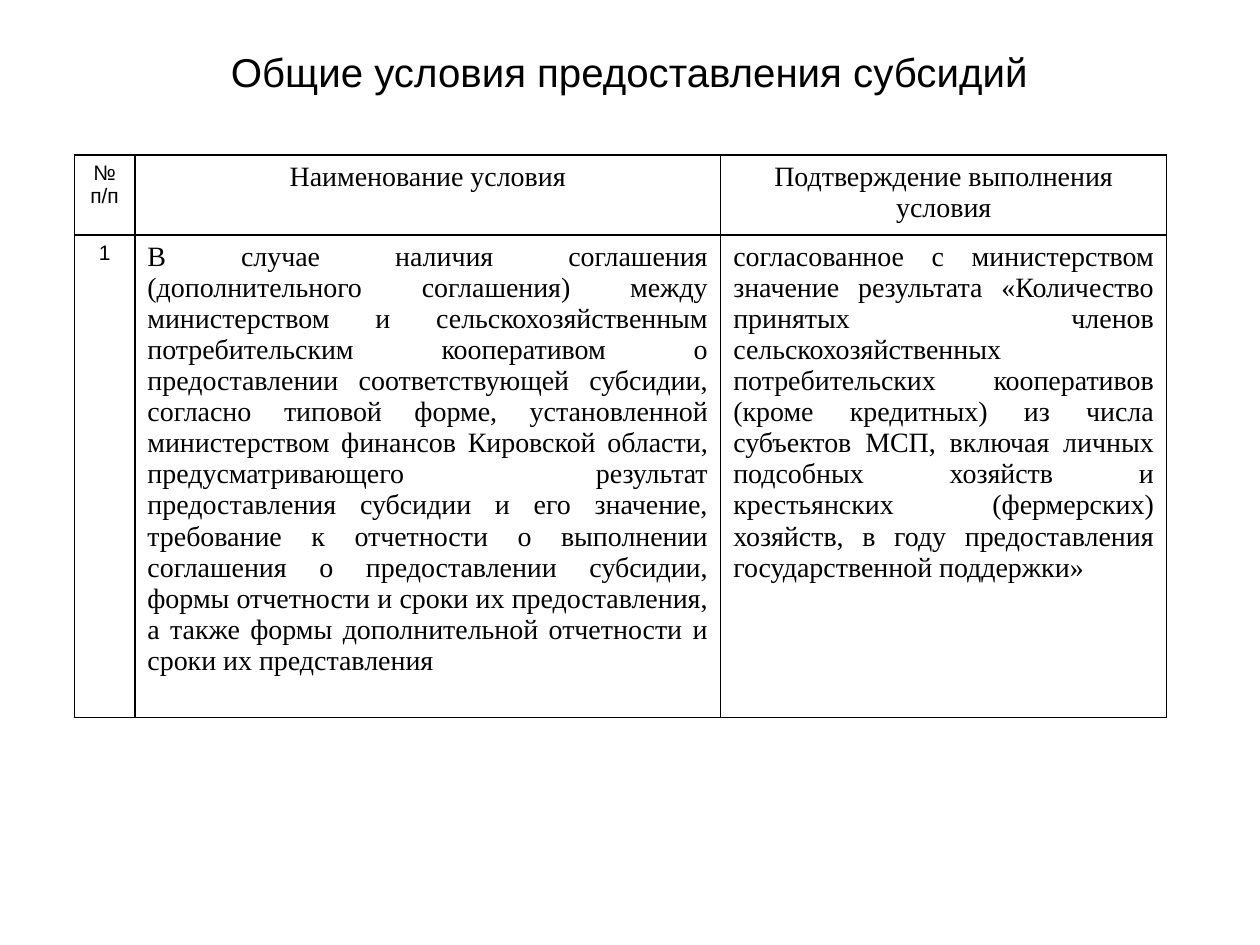
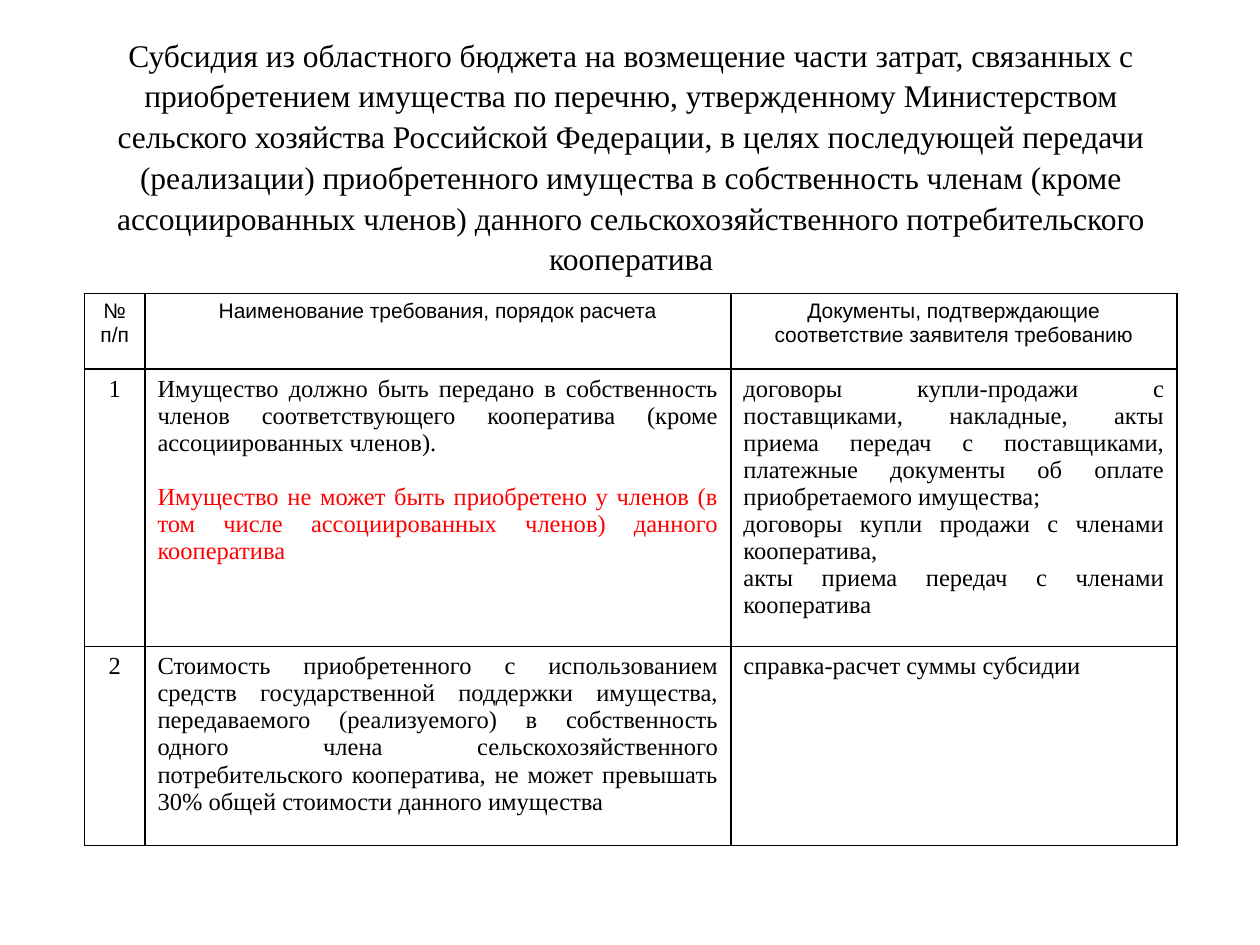
from dataclasses import dataclass

import lxml.etree
import pptx
import pptx.dml.color
import pptx.enum.text
import pptx.oxml.ns
import pptx.util

Inches = pptx.util.Inches
Pt = pptx.util.Pt
Align = pptx.enum.text.PP_ALIGN

COLORS = {"text": "000000", "border": "000000", "warning": "FF0000", "cell": "FFFFFF"}
SANS, SERIF = "Arial", "Times New Roman"
COLUMN_WIDTHS = (0.48, 4.65, 3.54)
BORDER_WIDTH = Pt(1)


@dataclass(frozen=True)
class Style:
    font: str
    size: float
    align: Align = Align.CENTER
    color: str = "text"
    space_before: float = 0
    line_spacing: float = 1


@dataclass(frozen=True)
class CellText:
    style: Style
    paragraphs: tuple[str | tuple[Style, str], ...]


@dataclass(frozen=True)
class Title:
    text: str
    style: Style
    left: float
    top: float
    height: float
    anchor: pptx.enum.text.MSO_ANCHOR


@dataclass(frozen=True)
class Page:
    title: Title
    left: float
    top: float
    row_heights: tuple[float, ...]
    rows: tuple[tuple[CellText, ...], ...]


# Shared text styles
SMALL = Style(SANS, 12)
HEADING = Style(SERIF, 16)
BODY_LARGE = Style(SERIF, 16, Align.JUSTIFY)
NUMBER = Style(SERIF, 14)
BODY = Style(SERIF, 14, Align.JUSTIFY)
BODY_LEFT = Style(SERIF, 14, Align.LEFT)
WARNING = Style(SERIF, 14, Align.JUSTIFY, "warning", space_before=15.5)
NUMBER_HEADING = CellText(SMALL, ("№", "п/п"))

PAGES = (
    Page(
        Title("Общие условия предоставления субсидий", Style(SANS, 23),
              0.5, 0.3, 0.54, pptx.enum.text.MSO_ANCHOR.MIDDLE),
        0.59, 1.23, (0.6, 3.56),
        (
            (NUMBER_HEADING,
             CellText(HEADING, ("Наименование условия",)),
             CellText(HEADING, ("Подтверждение выполнения условия",))),
            (CellText(SMALL, ("1",)),
             CellText(BODY_LARGE, (
                 "В случае наличия соглашения (дополнительного соглашения) между "
                 "министерством и сельскохозяйственным потребительским кооперативом "
                 "о предоставлении соответствующей субсидии, согласно типовой форме, "
                 "установленной министерством финансов Кировской области, "
                 "предусматривающего результат предоставления субсидии и его значение, "
                 "требование к отчетности о выполнении соглашения о предоставлении "
                 "субсидии, формы отчетности и сроки их предоставления, а также формы "
                 "дополнительной отчетности и сроки их представления",)),
             CellText(BODY_LARGE, (
                 "согласованное с министерством значение результата «Количество "
                 "принятых членов сельскохозяйственных потребительских кооперативов "
                 "(кроме кредитных) из числа субъектов МСП, включая личных подсобных "
                 "хозяйств и крестьянских (фермерских) хозяйств, в году "
                 "предоставления государственной поддержки»",))),
        ),
    ),
    Page(
        Title("Субсидия из областного бюджета на возмещение части затрат, связанных с "
              "приобретением имущества по перечню, утвержденному Министерством сельского "
              "хозяйства Российской Федерации, в целях последующей передачи (реализации) "
              "приобретенного имущества в собственность членам (кроме ассоциированных "
              "членов) данного сельскохозяйственного потребительского кооператива",
              Style(SERIF, 18, line_spacing=1.08),
              0.51, 0.21, 1.48, pptx.enum.text.MSO_ANCHOR.TOP),
        0.67, 2.33, (0.6, 2.04, 1.58),
        (
            (NUMBER_HEADING,
             CellText(SMALL, ("Наименование требования, порядок расчета",)),
             CellText(SMALL, ("Документы, подтверждающие соответствие заявителя "
                              "требованию",))),
            (CellText(NUMBER, ("1",)),
             CellText(BODY, (
                 "Имущество должно быть передано в собственность членов "
                 "соответствующего кооператива (кроме ассоциированных членов).",
                 (WARNING, "Имущество не может быть приобретено у членов (в том числе "
                           "ассоциированных членов) данного кооператива"))),
             CellText(BODY, (
                 "договоры купли-продажи с поставщиками, накладные, акты приема "
                 "передач с поставщиками, платежные документы об оплате "
                 "приобретаемого имущества;",
                 "договоры купли продажи с членами кооператива,",
                 "акты приема передач с членами кооператива"))),
            (CellText(NUMBER, ("2",)),
             CellText(BODY, (
                 "Стоимость приобретенного с использованием средств государственной "
                 "поддержки имущества, передаваемого (реализуемого) в собственность "
                 "одного члена сельскохозяйственного потребительского кооператива, "
                 "не может превышать 30% общей стоимости данного имущества",)),
             CellText(BODY_LEFT, ("справка-расчет суммы субсидии",))),
        ),
    ),
)


def rgb(name: str) -> pptx.dml.color.RGBColor:
    return pptx.dml.color.RGBColor.from_string(COLORS[name])


def write_paragraph(paragraph, text: str, style: Style) -> None:
    paragraph.alignment = style.align
    paragraph.space_before = Pt(style.space_before)
    paragraph.line_spacing = style.line_spacing
    run = paragraph.add_run()
    run.text = text
    run.font.name = style.font
    run.font.size = Pt(style.size)
    run.font.color.rgb = rgb(style.color)


def add_title(slide, title: Title) -> None:
    shape = slide.shapes.add_textbox(
        Inches(title.left), Inches(title.top), Inches(9), Inches(title.height))
    frame = shape.text_frame
    frame.word_wrap = True
    frame.vertical_anchor = title.anchor
    frame.margin_left = frame.margin_right = Inches(0.2)
    write_paragraph(frame.paragraphs[0], title.text, title.style)


def set_borders(cell) -> None:
    """Frame the cell; border elements come before the fill."""
    qualified = pptx.oxml.ns.qn
    properties = cell._tc.get_or_add_tcPr()
    for position, side in enumerate(("lnL", "lnR", "lnT", "lnB")):
        line = lxml.etree.Element(qualified(f"a:{side}"), w=str(BORDER_WIDTH))
        fill = lxml.etree.SubElement(line, qualified("a:solidFill"))
        lxml.etree.SubElement(fill, qualified("a:srgbClr"), val=COLORS["border"])
        properties.insert(position, line)


def fill_cell(cell, content: CellText) -> None:
    cell.fill.solid()
    cell.fill.fore_color.rgb = rgb("cell")
    set_borders(cell)
    frame = cell.text_frame
    for index, entry in enumerate(content.paragraphs):
        style, text = (content.style, entry) if isinstance(entry, str) else entry
        paragraph = frame.add_paragraph() if index else frame.paragraphs[0]
        write_paragraph(paragraph, text, style)


def add_conditions_table(slide, page: Page) -> None:
    shape = slide.shapes.add_table(
        len(page.rows), len(COLUMN_WIDTHS), Inches(page.left), Inches(page.top),
        Inches(sum(COLUMN_WIDTHS)), Inches(sum(page.row_heights)))
    table = shape.table
    table.first_row = table.horz_banding = False
    for column, width in zip(table.columns, COLUMN_WIDTHS):
        column.width = Inches(width)
    for row, height, contents in zip(table.rows, page.row_heights, page.rows):
        row.height = Inches(height)
        for cell, content in zip(row.cells, contents):
            fill_cell(cell, content)


def main() -> None:
    presentation = pptx.Presentation()
    presentation.slide_width = Inches(10)
    presentation.slide_height = Inches(7.5)
    for page in PAGES:
        slide = presentation.slides.add_slide(presentation.slide_layouts[6])
        add_title(slide, page.title)
        add_conditions_table(slide, page)
    presentation.save("out.pptx")


if __name__ == "__main__":
    main()
